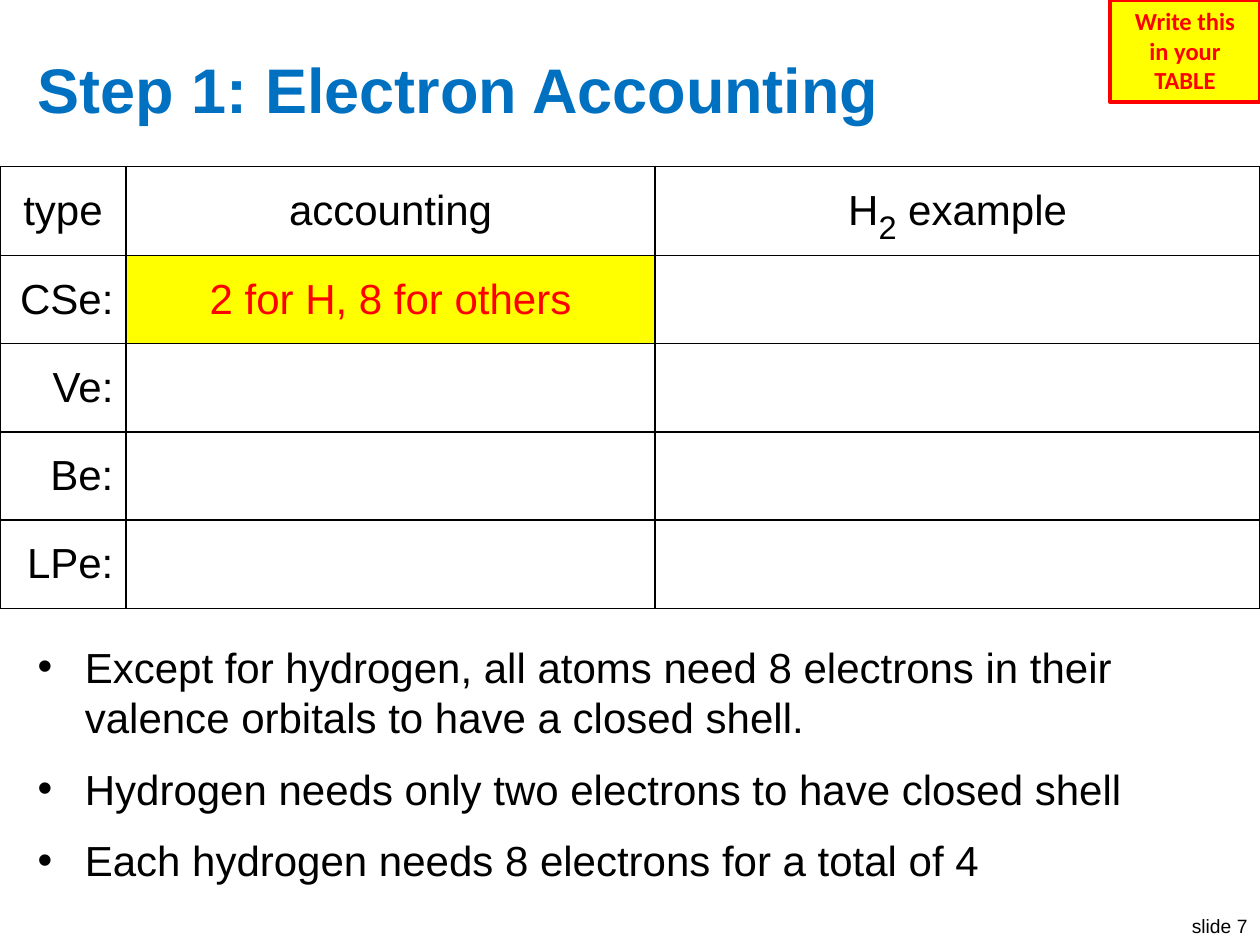
from typing import NamedTuple, Optional

from lxml.etree import SubElement
from pptx import Presentation
from pptx.dml.color import RGBColor
from pptx.enum.shapes import MSO_SHAPE
from pptx.enum.text import MSO_ANCHOR as Anchor, MSO_AUTO_SIZE as AutoSize, PP_ALIGN as Align
from pptx.oxml import parse_xml
from pptx.oxml.ns import nsdecls, qn
from pptx.util import Pt

BLACK = RGBColor(0x00, 0x00, 0x00)
WHITE = RGBColor(0xFF, 0xFF, 0xFF)
BLUE = RGBColor(0x00, 0x70, 0xC0)
RED = RGBColor(0xFF, 0x00, 0x00)
YELLOW = RGBColor(0xFF, 0xFF, 0x00)

COLUMN_WIDTHS = (72, 302.4, 345.6)
ROW_HEIGHT = 50.4
BULLET_INDENT = 27


class Box(NamedTuple):
    left: float
    top: float
    width: float
    height: float

    def points(self) -> list:
        return [Pt(value) for value in self]


class Style(NamedTuple):
    size: float
    color: RGBColor = BLACK
    bold: bool = False
    font: str = "Arial"
    align: Optional[Align] = None


class Entry(NamedTuple):
    text: str
    align: Align = Align.CENTER
    color: RGBColor = BLACK
    fill: RGBColor = WHITE


EMPTY = Entry("")
HEADINGS = [Entry("type"), Entry("accounting"), Entry("H")]
CLOSED_SHELL = Entry("2 for H, 8 for others", color=RED, fill=YELLOW)
ROWS = [HEADINGS] + [
    [Entry(label, Align.RIGHT), accounting, EMPTY]
    for label, accounting in (
        ("CSe:", CLOSED_SHELL), ("Ve:", EMPTY), ("Be:", EMPTY), ("LPe:", EMPTY))
]
NOTES = (
    "Except for hydrogen, all atoms need 8 electrons in their "
    "valence orbitals to have a closed shell.",
    "Hydrogen needs only two electrons to have closed shell",
    "Each hydrogen needs 8 electrons for a total of 4",
)


def style_span(span, style: Style) -> None:
    span.font.name = style.font
    span.font.size = Pt(style.size)
    span.font.bold = style.bold
    span.font.color.rgb = style.color


def write(frame, text: str, style: Style) -> None:
    """Fill a text frame, one paragraph a line, in one style."""
    frame.text = text
    for para in frame.paragraphs:
        para.alignment = style.align
        for span in para.runs:
            style_span(span, style)


def add_text(page, box: Box, text: str, style: Style):
    frame = page.shapes.add_textbox(*box.points()).text_frame
    frame.word_wrap = True
    write(frame, text, style)
    return frame


def add_bullet(para) -> None:
    properties = para._p.get_or_add_pPr()
    properties.set("marL", str(Pt(BULLET_INDENT)))
    properties.set("indent", str(-Pt(BULLET_INDENT)))
    SubElement(properties, qn("a:buFont")).set("typeface", "Arial")
    SubElement(properties, qn("a:buChar")).set("char", "•")


def add_borders(cell) -> None:
    properties = cell._tc.get_or_add_tcPr()
    for index, side in enumerate(("lnL", "lnR", "lnT", "lnB")):
        properties.insert(index, parse_xml(
            f'<a:{side} {nsdecls("a")} w="{Pt(1)}"><a:solidFill>'
            f'<a:srgbClr val="{BLACK}"/></a:solidFill></a:{side}>'))


def fill_cell(cell, entry: Entry) -> None:
    cell.fill.solid()
    cell.fill.fore_color.rgb = entry.fill
    cell.vertical_anchor = Anchor.MIDDLE
    if entry.text:
        write(cell.text_frame, entry.text, Style(24, entry.color, align=entry.align))
    add_borders(cell)


def add_accounting_table(page) -> None:
    box = Box(0, 95.04, sum(COLUMN_WIDTHS), ROW_HEIGHT * len(ROWS))
    table = page.shapes.add_table(len(ROWS), len(COLUMN_WIDTHS), *box.points()).table
    for column, width in zip(table.columns, COLUMN_WIDTHS):
        column.width = Pt(width)
    for row, entries in zip(table.rows, ROWS):
        row.height = Pt(ROW_HEIGHT)
        for cell, entry in zip(row.cells, entries):
            fill_cell(cell, entry)

    formula = table.cell(0, 2).text_frame.paragraphs[0]
    subscript, rest = formula.add_run(), formula.add_run()
    subscript.text, rest.text = "2", " example"
    style_span(subscript, Style(32))
    style_span(rest, Style(24))
    subscript._r.get_or_add_rPr().set("baseline", "-25000")


def add_callout(page) -> None:
    box = Box(634.32, 0, 85.68, 58.32)
    callout = page.shapes.add_shape(MSO_SHAPE.RECTANGLE, *box.points())
    callout.shadow.inherit = False
    callout.fill.solid()
    callout.fill.fore_color.rgb = YELLOW
    callout.line.color.rgb = RED
    callout.line.width = Pt(2.25)
    frame = callout.text_frame
    frame.word_wrap = True
    frame.auto_size = AutoSize.SHAPE_TO_FIT_TEXT
    frame.vertical_anchor = Anchor.TOP
    write(frame, "Write this\nin your TABLE", Style(14, RED, True, "Calibri", Align.CENTER))


def main() -> None:
    deck = Presentation()
    deck.slide_width, deck.slide_height = Pt(720), Pt(540)
    page = deck.slides.add_slide(deck.slide_layouts[5])

    add_text(page, Box(666, 519.12, 54, 20.88), "slide 7", Style(11, align=Align.RIGHT))

    title = page.shapes.title
    title.left, title.top, title.width, title.height = Box(14.4, 21.6, 691.2, 57.6).points()
    title.text_frame.vertical_anchor = Anchor.MIDDLE
    write(title.text_frame, "Step 1: Electron Accounting",
          Style(36, BLUE, True, align=Align.LEFT))

    notes = add_text(page, Box(14.4, 362.88, 691.2, 159.84), "\n".join(NOTES), Style(24))
    for para in notes.paragraphs:
        para.space_before = Pt(12)
        add_bullet(para)

    add_accounting_table(page)
    add_callout(page)
    deck.save("out.pptx")


if __name__ == "__main__":
    main()
